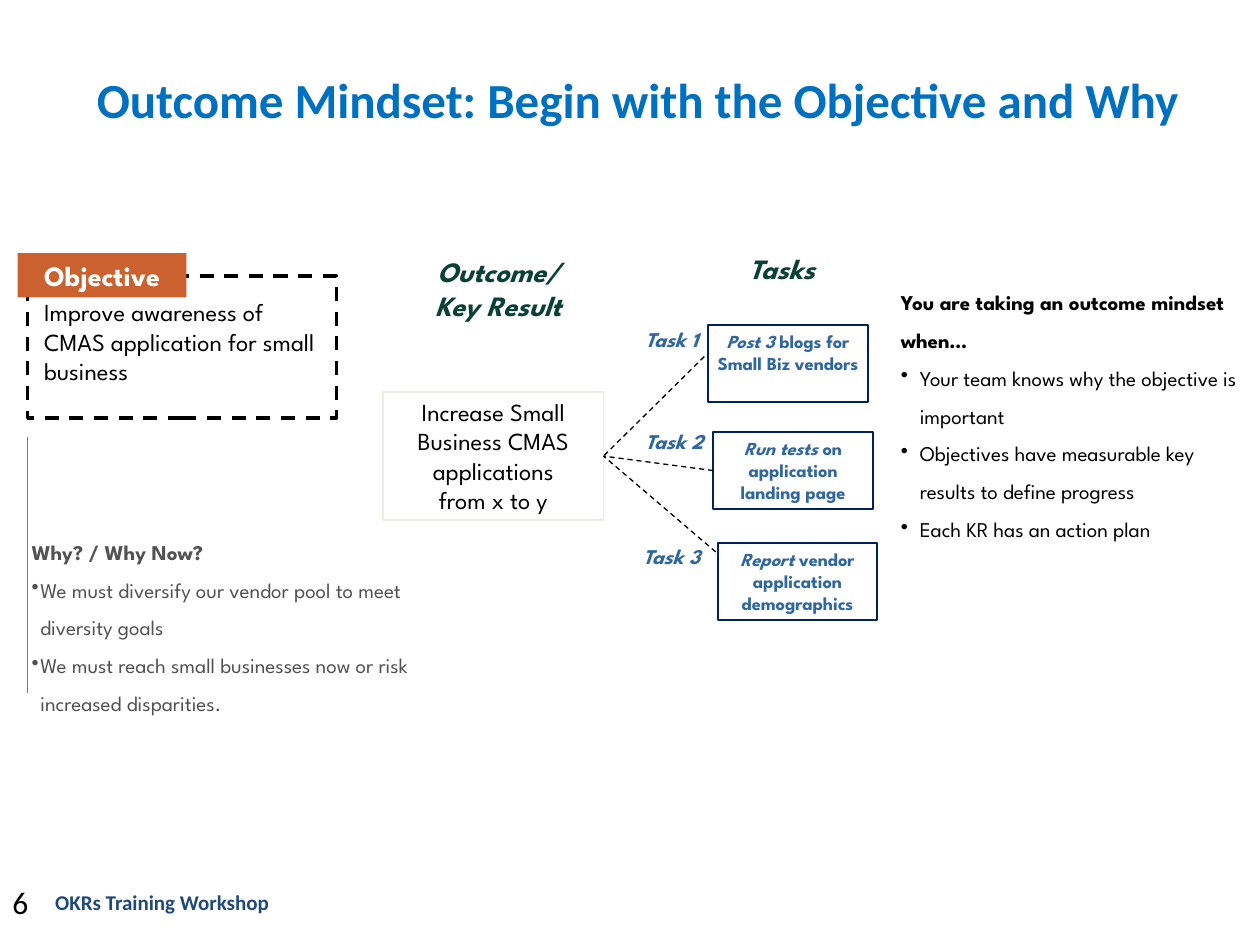
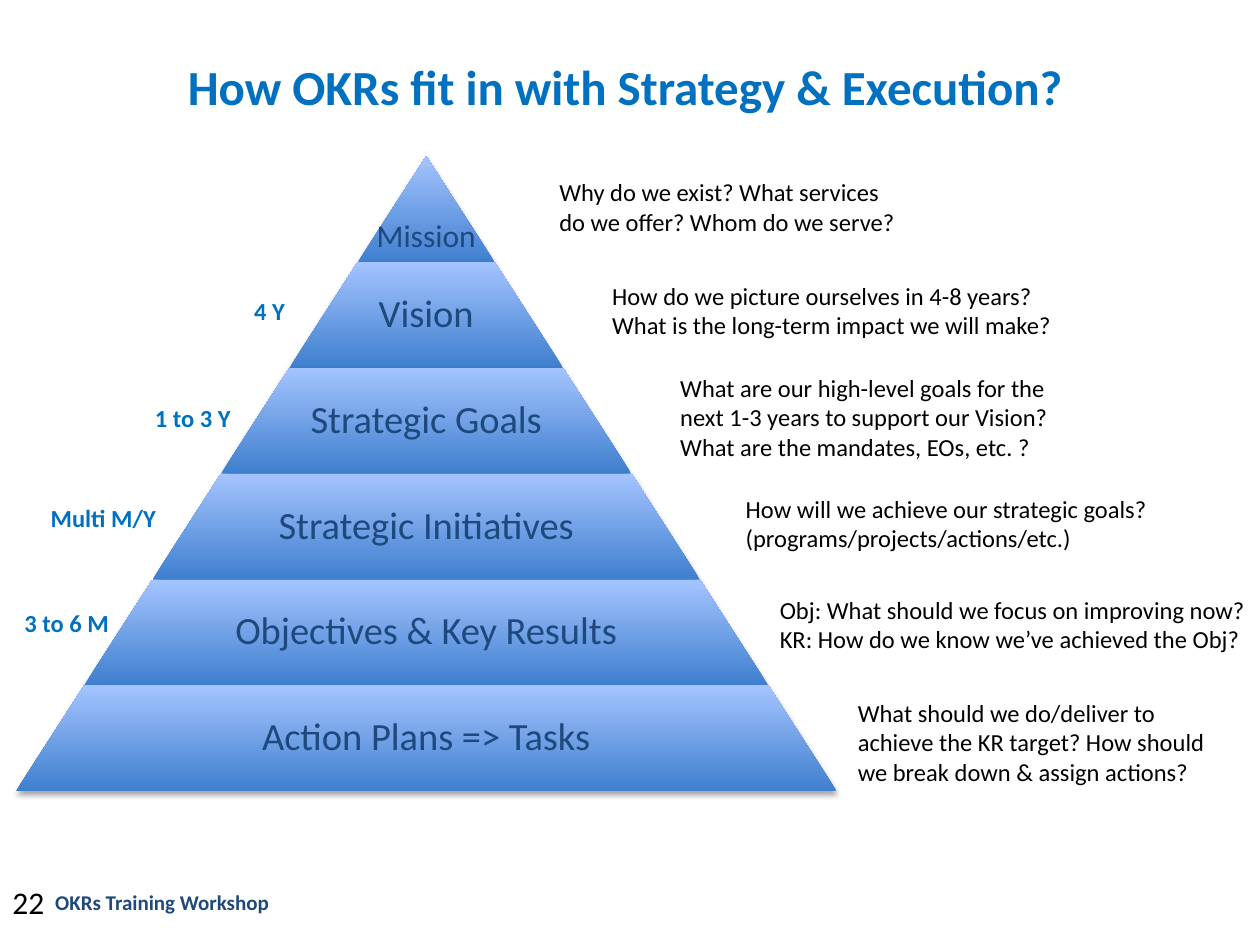
from typing import NamedTuple

from lxml.etree import SubElement
from pptx import Presentation
from pptx.dml.color import RGBColor
from pptx.enum.dml import MSO_LINE
from pptx.enum.shapes import MSO_CONNECTOR, MSO_SHAPE
from pptx.enum.text import MSO_ANCHOR, PP_ALIGN
from pptx.oxml.ns import qn
from pptx.util import Inches, Pt

COLS, ROWS = 100, 75
WIDE, HIGH = Inches(10), Inches(7.5)
HUES = {
    "black": "000000", "white": "FFFFFF", "title": "0070C0", "navy": "1F497D",
    "rust": "CB612E", "gray": "525252", "green": "0A4035", "task": "3067A0",
    "edge": "002060", "cream": "EEECE1", "deep": "3F7FCE", "pale": "A4C4FF",
}
LEFT, MID = PP_ALIGN.LEFT, PP_ALIGN.CENTER
SPARTAN = "League Spartan"


class Box(NamedTuple):
    x: float
    y: float
    w: float
    h: float


class Face(NamedTuple):
    size: float
    hue: str
    bold: bool = False
    slant: bool = False
    font: str = "Calibri"


class Pad(NamedTuple):
    x: float = 1
    top: float = 0.5
    base: float = 0.5


class Para(NamedTuple):
    text: str
    face: Face
    align: PP_ALIGN = LEFT
    lead: str = ""
    space: float = 1
    left: float = 0
    hang: float = 0
    bullet: bool = False


class Task(NamedTuple):
    name: str
    tag: tuple[float, float]
    box: Box
    start: tuple[float, float]
    lead: str
    lines: tuple[str, ...]


class Tier(NamedTuple):
    name: str
    note: str
    place: Box
    indent: float = 5
    term: str = ""
    spot: Box | None = None


TIGHT = Pad(0.4, 0.4, 0.4)
TITLE = Face(28, "title", True)
BODY = Face(14, "black", font=SPARTAN)
HEAD = Face(16, "green", True, True, SPARTAN)
TAG = Face(12, "task", True, True, SPARTAN)
STEP = Face(10.5, "task", True, font=SPARTAN)
NOTE = Face(14, "black")
TERM = Face(14, "title", True)

TASKS = (
    Task("Task 1", (49.8, 25.5), Box(56.2, 25.8, 12.7, 6.1), (55.9, 28.3),
         "Post 3 ", ("blogs for Small Biz vendors",)),
    Task("Task 2", (50, 33.6), Box(56.6, 34.3, 12.7, 6.1), (56.6, 37.35),
         "Run tests ", ("on application landing page",)),
    Task("Task 3", (49.8, 42.7), Box(57, 43.1, 12.6, 6.1), (56.8, 43.8),
         "Report ", ("vendor application", "demographics")),
)
TIERS = (
    Tier("Mission", "Why do we exist? What services do we offer? Whom do we serve?",
         Box(38.4, 13.6, 33.9, 5.7)),
    Tier("Vision", "How do we picture ourselves in 4-8 years? "
         "What is the long-term impact we will make?",
         Box(47.6, 21.8, 38.1, 5.7), 0, "4 Y", Box(10.7, 23, 16.4, 3.4)),
    Tier("Strategic Goals", "What are our high-level goals for the next 1-3 years "
         "to support our Vision? What are the mandates, EOs, etc. ?",
         Box(48, 29.1, 37.5, 8.1), term="1 to 3 Y", spot=Box(4.6, 31.5, 16.4, 3.4)),
    Tier("Strategic Initiatives", "How will we achieve our strategic goals? "
         "(programs/projects/actions/etc.)",
         Box(53.2, 38.7, 39.3, 5.7), term="Multi M/Y", spot=Box(-3.6, 39.4, 18.6, 3.4)),
    Tier("Objectives & Key Results", "Obj: What should we focus on improving now? "
         "KR: How do we know we’ve achieved the Obj?",
         Box(55.9, 46.7, 44.1, 5.7), term="3 to 6 M", spot=Box(-5.4, 47.8, 16.4, 3.4)),
    Tier("Action Plans => Tasks", "What should we do/deliver to achieve the KR target? "
         "How should we break down & assign actions?",
         Box(62.1, 54.9, 36.7, 8.1)),
)


def col(n: float) -> int:
    return round(WIDE * n / COLS)


def row(n: float) -> int:
    return round(HIGH * n / ROWS)


def area(box: Box) -> tuple[int, int, int, int]:
    return col(box.x), row(box.y), col(box.w), row(box.h)


def tint(name: str) -> RGBColor:
    return RGBColor.from_string(HUES[name])


def style(font, face: Face) -> None:
    font.name, font.size = face.font, Pt(face.size)
    font.bold, font.italic = face.bold, face.slant
    font.color.rgb = tint(face.hue)


def write(shape, paras: list[Para], pad: Pad = Pad(), anchor=MSO_ANCHOR.TOP) -> None:
    frame = shape.text_frame
    frame.word_wrap = True
    frame.vertical_anchor = anchor
    frame.margin_left = frame.margin_right = col(pad.x)
    frame.margin_top, frame.margin_bottom = row(pad.top), row(pad.base)
    for i, item in enumerate(paras):
        para = frame.add_paragraph() if i else frame.paragraphs[0]
        para.alignment, para.line_spacing = item.align, item.space
        props = para._p.get_or_add_pPr()
        props.set("marL", str(col(item.left)))
        props.set("indent", str(col(item.hang)))
        if item.bullet:
            SubElement(props, qn("a:buChar")).set("char", "•")
        style(para.font, item.face)
        if item.lead:
            run = para.add_run()
            run.text = item.lead
            run.font.italic = True
        para.add_run().text = item.text


def text(slide, box: Box, paras: list[Para], pad: Pad = Pad(), anchor=MSO_ANCHOR.TOP) -> None:
    write(slide.shapes.add_textbox(*area(box)), paras, pad, anchor)


def block(slide, box: Box, fill: str = "", edge: str = "", width: float = 1):
    shape = slide.shapes.add_shape(MSO_SHAPE.RECTANGLE, *area(box))
    shape.shadow.inherit = False
    if fill:
        shape.fill.solid()
        shape.fill.fore_color.rgb = tint(fill)
    else:
        shape.fill.background()
    if edge:
        shape.line.color.rgb = tint(edge)
        shape.line.width = Pt(width)
    else:
        shape.line.fill.background()
    return shape


def link(slide, start: tuple[float, float], end: tuple[float, float], hue: str):
    line = slide.shapes.add_connector(
        MSO_CONNECTOR.STRAIGHT, col(start[0]), row(start[1]), col(end[0]), row(end[1]))
    line.line.color.rgb = tint(hue)
    line.line.width = Pt(0.75)
    SubElement(line._element.spPr, qn("a:effectLst"))
    return line


def page(deck, number: int, title: str, box: Box):
    slide = deck.slides.add_slide(deck.slide_layouts[6])
    text(slide, Box(0, 69.6, 9.2, 4), [Para(str(number), Face(18, "black"))])
    text(slide, Box(3.4, 70.1, 32.4, 4),
         [Para("OKRs Training Workshop", Face(12, "navy", True))])
    text(slide, box, [Para(title, TITLE, MID)])
    return slide


def points(head: str, items: list[str], hue: str, space: float,
           left: float, hang: float) -> list[Para]:
    face = Face(12, hue, font=SPARTAN)
    first = Para(head, face._replace(bold=True), space=space)
    return [first] + [Para(item, face, space=1.5, left=left, hang=hang, bullet=True)
                      for item in items]


def mindset(deck) -> None:
    slide = page(deck, 6, "Outcome Mindset: Begin with the Objective and Why",
                 Box(5.6, 5, 90, 12.5))
    block(slide, Box(2.2, 21.9, 24.5, 11.3), edge="black", width=2).line.dash_style = MSO_LINE.DASH
    link(slide, (2.2, 34.7), (2.2, 55), "rust")
    write(block(slide, Box(1.4, 20.1, 13.4, 3.5), "rust"),
          [Para("Objective", Face(16, "white", True, font=SPARTAN), MID)], TIGHT)
    text(slide, Box(3.1, 23.2, 22.5, 7.8),
         [Para("Improve awareness of CMAS application for small business", BODY)], TIGHT)
    text(slide, Box(2.1, 42.4, 33.2, 14.9), points(
        "Why? / Why Now?",
        ["We must diversify our vendor pool to meet diversity goals",
         "We must reach small businesses now or risk increased disparities."],
        "gray", 1, 0.7, -0.8), TIGHT)
    text(slide, Box(33.1, 19.8, 12.9, 6.1), [Para("Outcome/ Key Result", HEAD, MID)], TIGHT)
    text(slide, Box(55.2, 19.6, 13.7, 3.4), [Para("Tasks", HEAD, MID)], TIGHT)
    place = Box(30.4, 31.1, 17.5, 10.2)
    goal = block(slide, place, edge="cream")
    write(goal, [Para("Increase Small Business CMAS applications", BODY, MID),
                 Para("from x to y", BODY, MID)], TIGHT)
    hub = place.x + place.w, place.y + place.h / 2
    for task in TASKS:
        text(slide, Box(*task.tag, 7, 2.8), [Para(task.name, TAG, MID)], TIGHT)
        card = block(slide, task.box, edge="edge")
        write(card, [Para(line, STEP, MID, "" if i else task.lead)
                     for i, line in enumerate(task.lines)], TIGHT)
        line = link(slide, task.start, hub, "black")
        line.line.dash_style = MSO_LINE.DASH
        if task.start == (task.box.x, task.box.y + task.box.h / 2):
            line.begin_connect(card, 1)
        line.end_connect(goal, 3)
    text(slide, Box(71.1, 21.6, 27.6, 22), points(
        "You are taking an outcome mindset when…",
        ["Your team knows why the objective is important",
         "Objectives have measurable key results to define progress",
         "Each KR has an action plan"], "black", 1.5, 1.5, -1.5), TIGHT)


def slab(slide, box: Box, slope: float) -> None:
    shape = slide.shapes.add_shape(MSO_SHAPE.TRAPEZOID, *area(box))
    shape.adjustments[0] = slope
    shape.fill.gradient()
    shape.fill.gradient_angle = 90
    for stop, hue in zip(shape.fill.gradient_stops, ("deep", "pale")):
        stop.color.rgb = tint(hue)
    shape.line.fill.background()
    shape.shadow.inherit = False
    glow = SubElement(shape._element.spPr.find(qn("a:effectLst")), qn("a:outerShdw"),
                      blurRad=str(Pt(3.1)), dist=str(Pt(1.8)), dir="5400000", rotWithShape="0")
    shade = SubElement(glow, qn("a:srgbClr"), val=HUES["black"])
    SubElement(shade, qn("a:alpha"), val="35000")


def pyramid(deck) -> None:
    slide = page(deck, 22, "How OKRs fit in with Strategy & Execution?", Box(4.6, 4, 90, 5))
    axis, top, tall, step = 33.83, 12.4, 8.4, 10.86
    for i, tier in enumerate(TIERS):
        wide, y = step * (i + 1), top + tall * i
        slab(slide, Box(axis - wide / 2, y, wide, tall), step / 2 / tall)
        span = wide * 0.65 if i else wide
        size, base, anchor = (22, 0.3, MSO_ANCHOR.MIDDLE) if i else (18, 0.6, MSO_ANCHOR.BOTTOM)
        text(slide, Box(axis - span / 2, y, span, tall),
             [Para(tier.name, Face(size, "navy"), MID, space=0.9)], Pad(0.3, 0.3, base), anchor)
        text(slide, tier.place, [Para(tier.note, NOTE, left=tier.indent)])
        if tier.spot:
            text(slide, tier.spot, [Para(tier.term, TERM, MID, left=5)])


def main() -> None:
    deck = Presentation()
    deck.slide_width, deck.slide_height = WIDE, HIGH
    mindset(deck)
    pyramid(deck)
    deck.save("out.pptx")


if __name__ == "__main__":
    main()
